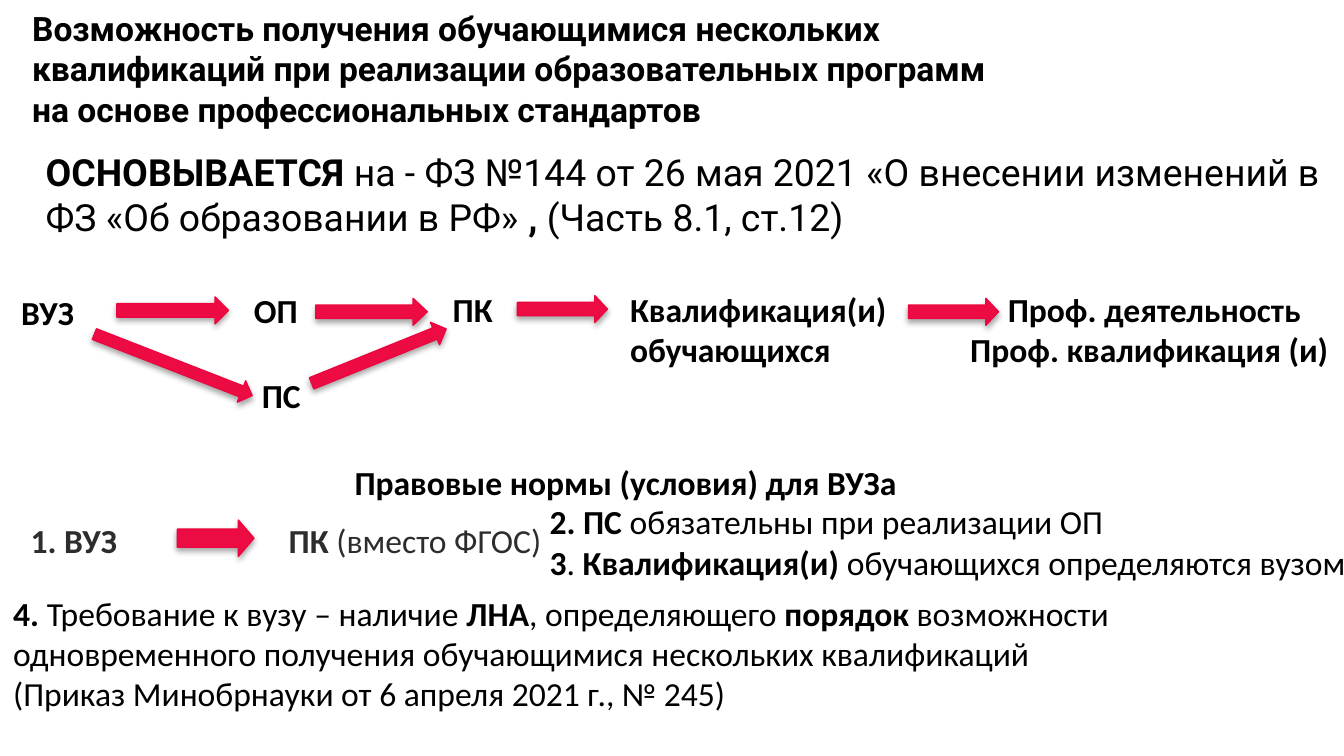
"""Build the slide on awarding several qualifications under professional standards."""
import pptx
import pptx.dml.color
import pptx.enum.shapes
import pptx.enum.text
import pptx.oxml
import pptx.oxml.ns
import pptx.util

Inches = pptx.util.Inches
COLORS = {"text": "000000", "norm": "2C2D2E", "arrow": "EC0B43", "outline": "EC053F"}
SHADOW = (
    f'<a:outerShdw {pptx.oxml.ns.nsdecls("a")} blurRad="40000" dist="23000" dir="5400000" rotWithShape="0">'
    '<a:srgbClr val="000000"><a:alpha val="35000"/></a:srgbClr></a:outerShdw>'
)


def rgb(name):
    return pptx.dml.color.RGBColor.from_string(COLORS[name])


def add_text(text, *, at, font="Calibri", size=18, color="text", anchor="TOP", first_indent=0):
    """Write text, one paragraph per line, with bold spans between ** marks and line breaks at | marks."""
    box = page.shapes.add_textbox(*map(Inches, at))
    frame = box.text_frame
    frame.word_wrap = True
    frame.vertical_anchor = pptx.enum.text.MSO_ANCHOR[anchor]
    for number, line in enumerate(text.split("\n")):
        para = frame.add_paragraph() if number else frame.paragraphs[0]
        if first_indent and number == 0:
            para._p.get_or_add_pPr().set("indent", str(Inches(first_indent)))
        for position, part in enumerate(line.split("**")):
            for row, piece in enumerate(part.split("|")):
                if row:
                    para.add_line_break()
                if piece:
                    span = para.add_run()
                    span.text = piece
                    span.font.name = font
                    span.font.size = pptx.util.Pt(size)
                    span.font.bold = position % 2 == 1
                    span.font.color.rgb = rgb(color)


deck = pptx.Presentation()
deck.slide_width = Inches(10)
deck.slide_height = deck.slide_width * 9 // 16
page = deck.slides.add_slide(deck.slide_layouts[6])

add_text(
    "**Возможность получения обучающимися нескольких квалификаций при реализации образовательных программ |"
    "на основе профессиональных стандартов**",
    at=(0.14, 0.11, 7.99, 0.8), font="Roboto", anchor="MIDDLE",
)
add_text(
    "**ОСНОВЫВАЕТСЯ** на - ФЗ №144 от 26 мая 2021 «О внесении изменений в ФЗ «Об образовании в РФ» "
    "**, **(Часть 8.1, ст.12)",
    at=(0.24, 1.06, 9.72, 1.01), font="Roboto", size=20,
)

arrows = [
    (0.87, 2.21, 0.83, 0.2, 0, 0.5),
    (2.35, 2.22, 0.83, 0.2, 0, 0.53),
    (3.85, 2.2, 0.67, 0.2, 0, 0.47),
    (0.66, 2.63, 1.26, 0.17, 21.3, 0.5),
    (2.28, 2.56, 1.08, 0.18, 338, 0.5),
    (6.76, 2.22, 0.67, 0.2, 0, 0.47),
    (1.32, 3.87, 0.57, 0.27, 0, 0.43),
]
for left, top, width, height, rotation, head in arrows:
    arrow = page.shapes.add_shape(
        pptx.enum.shapes.MSO_SHAPE.RIGHT_ARROW, Inches(left), Inches(top), Inches(width), Inches(height)
    )
    arrow.rotation = rotation
    arrow.adjustments[1] = head
    arrow.fill.solid()
    arrow.fill.fore_color.rgb = rgb("arrow")
    arrow.line.color.rgb = rgb("outline")
    arrow.line.width = pptx.util.Pt(0.75)
    arrow.shadow.inherit = False
    effects = arrow._element.spPr.find(pptx.oxml.ns.qn("a:effectLst"))
    effects.append(pptx.oxml.parse_xml(SHADOW))

stages = [
    ("ОП", 1.79, 2.11, 0.58),
    ("ВУЗ", 0.06, 2.12, 0.76),
    ("ПК", 3.27, 2.1, 0.58),
    ("ПС", 1.85, 2.74, 0.58),
]
for label, left, top, width in stages:
    add_text(f"**{label}**", at=(left, top, width, 0.4))
add_text("**Квалификация(и)**\n**обучающихся**", at=(4.59, 2.1, 2.46, 0.71))
add_text(
    "**Проф. деятельность**\n**Проф. квалификация (и)**",
    at=(7.12, 2.1, 2.88, 0.71), first_indent=0.28,
)

add_text("**Правовые нормы (условия) для ВУЗа**", at=(2.54, 3.39, 4.6, 0.4))
add_text("**1. ВУЗ**", at=(0.13, 3.82, 1.24, 0.4), color="norm")
add_text("**ПК **(вместо ФГОС)", at=(2.05, 3.82, 2.99, 0.4), color="norm")
add_text(
    "**4. **Требование к вузу – наличие **ЛНА**, определяющего **порядок** возможности "
    "одновременного получения обучающимися нескольких квалификаций\n"
    "(Приказ Минобрнауки от 6 апреля 2021 г., № 245)",
    at=(0, 4.36, 10, 1.01),
)
add_text(
    "**2. ПС **обязательны при реализации ОП\n"
    "**3**. **Квалификация(и)** обучающихся определяются вузом",
    at=(3.99, 3.68, 6.32, 0.71),
)

deck.save("out.pptx")
